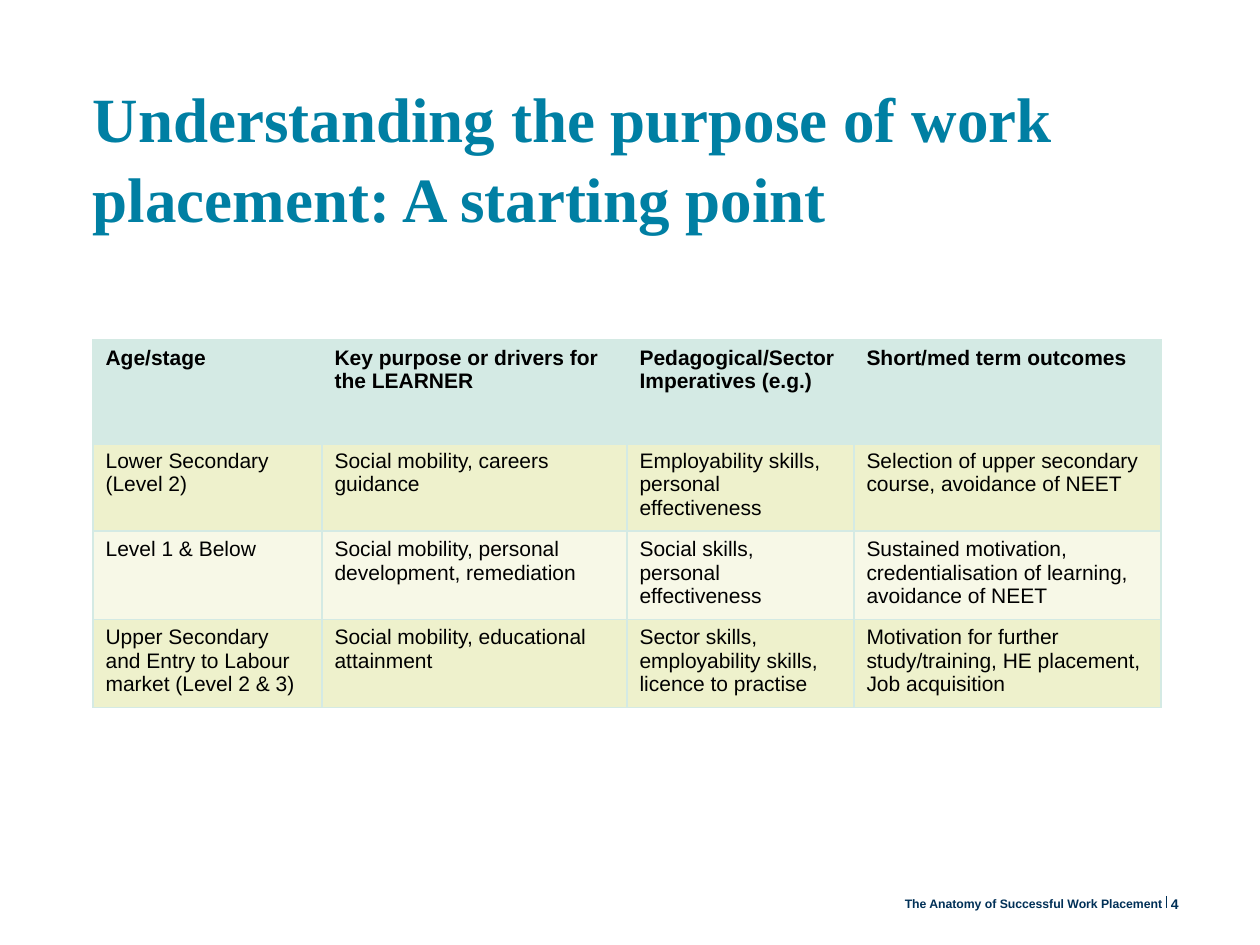
import pptx
import pptx.dml.color
import pptx.enum.shapes
import pptx.enum.text
import pptx.oxml
import pptx.oxml.ns
import pptx.util

PX = 914400 // 126
THEME = {
    "title": "007FA3", "footer": "003057", "text": "000000",
    "header": "D4EAE4", "bands": ("EEF1CC", "F7F8E7"), "border": "D4EAE4",
    "title_size": 36, "table_size": 12, "footer_size": 7, "number_size": 8,
    "serif": "Times New Roman", "sans": "Arial",
}
ANCHOR = pptx.enum.text.MSO_ANCHOR
ALIGN = pptx.enum.text.PP_ALIGN


def write(frame, text, *, size, color, font=THEME["sans"], bold=True,
          align=ALIGN.LEFT, spacing=None):
    """Fill a text frame, one paragraph per line of text."""
    frame.word_wrap = True
    for index, line in enumerate(text.split("\n")):
        paragraph = frame.add_paragraph() if index else frame.paragraphs[0]
        paragraph.alignment = align
        paragraph.line_spacing = spacing
        run = paragraph.add_run()
        run.text = line
        run.font.name, run.font.bold = font, bold
        run.font.size = pptx.util.Pt(size)
        run.font.color.rgb = pptx.dml.color.RGBColor.from_string(color)


def add_border(cell, side, points):
    cell._tc.get_or_add_tcPr().append(pptx.oxml.parse_xml(
        f'<a:ln{side} {pptx.oxml.ns.nsdecls("a")} w="{pptx.util.Pt(points)}">'
        f'<a:solidFill><a:srgbClr val="{THEME["border"]}"/></a:solidFill></a:ln{side}>'))


presentation = pptx.Presentation()
presentation.slide_width = pptx.util.Inches(10)
presentation.slide_height = pptx.util.Inches(7.5)
slide = presentation.slides.add_slide(presentation.slide_layouts[6])

# Title and footer
TEXT_BOXES = [
    ("Understanding the purpose of work placement: A starting point",
     (93, 76, 1047, 204), ANCHOR.TOP,
     dict(size=THEME["title_size"], color=THEME["title"], font=THEME["serif"], spacing=1.05)),
    ("The Anatomy of Successful Work Placement", (867, 895, 295, 16), ANCHOR.BOTTOM,
     dict(size=THEME["footer_size"], color=THEME["footer"], align=ALIGN.RIGHT)),
    ("4", (1171, 895, 59, 17), ANCHOR.MIDDLE,
     dict(size=THEME["number_size"], color=THEME["footer"])),
]
for text, box, anchor, style in TEXT_BOXES:
    frame = slide.shapes.add_textbox(*(length * PX for length in box)).text_frame
    frame.margin_left = frame.margin_right = frame.margin_top = frame.margin_bottom = 0
    frame.vertical_anchor = anchor
    write(frame, text, **style)

divider = slide.shapes.add_connector(
    pptx.enum.shapes.MSO_CONNECTOR.STRAIGHT, 1167 * PX, 896 * PX, 1167 * PX, 908 * PX)
divider.line.color.rgb = pptx.dml.color.RGBColor.from_string(THEME["footer"])
divider.line.width = pptx.util.Pt(0.5)
divider._element.spPr.append(
    pptx.oxml.parse_xml(f'<a:effectLst {pptx.oxml.ns.nsdecls("a")}/>'))

# Table of placement purposes
ROWS = [
    ("Age/stage", "Key purpose or drivers for the LEARNER",
     "Pedagogical/Sector Imperatives (e.g.)", "Short/med term outcomes"),
    ("Lower Secondary (Level 2)", "Social mobility, careers guidance",
     "Employability skills, personal effectiveness",
     "Selection of upper secondary course, avoidance of NEET"),
    ("Level 1 & Below", "Social mobility, personal development, remediation",
     "Social skills,\npersonal effectiveness",
     "Sustained motivation,\ncredentialisation of learning, avoidance of NEET"),
    ("Upper Secondary and Entry to Labour market (Level 2 & 3)",
     "Social mobility, educational attainment",
     "Sector skills, employability skills,\nlicence to practise",
     "Motivation for further study/training, HE placement,\nJob acquisition"),
]
COLUMN_WIDTHS = (229, 305, 227, 307)
ROW_HEIGHTS = (103, 86, 87, 87)

table = slide.shapes.add_table(
    len(ROWS), len(COLUMN_WIDTHS), 93 * PX, 340 * PX,
    sum(COLUMN_WIDTHS) * PX, sum(ROW_HEIGHTS) * PX).table
for column, width in zip(table.columns, COLUMN_WIDTHS):
    column.width = width * PX
for row_index, (row, height, texts) in enumerate(zip(table.rows, ROW_HEIGHTS, ROWS)):
    row.height = height * PX
    is_header = row_index == 0
    fill = THEME["header"] if is_header else THEME["bands"][(row_index - 1) % 2]
    for cell, text in zip(row.cells, texts):
        for side in "LRTB":
            under_header = (row_index, side) in ((0, "B"), (1, "T"))
            add_border(cell, side, 3 if under_header else 1)
        cell.fill.solid()
        cell.fill.fore_color.rgb = pptx.dml.color.RGBColor.from_string(fill)
        write(cell.text_frame, text, size=THEME["table_size"],
              color=THEME["text"], bold=is_header)

presentation.save("out.pptx")
